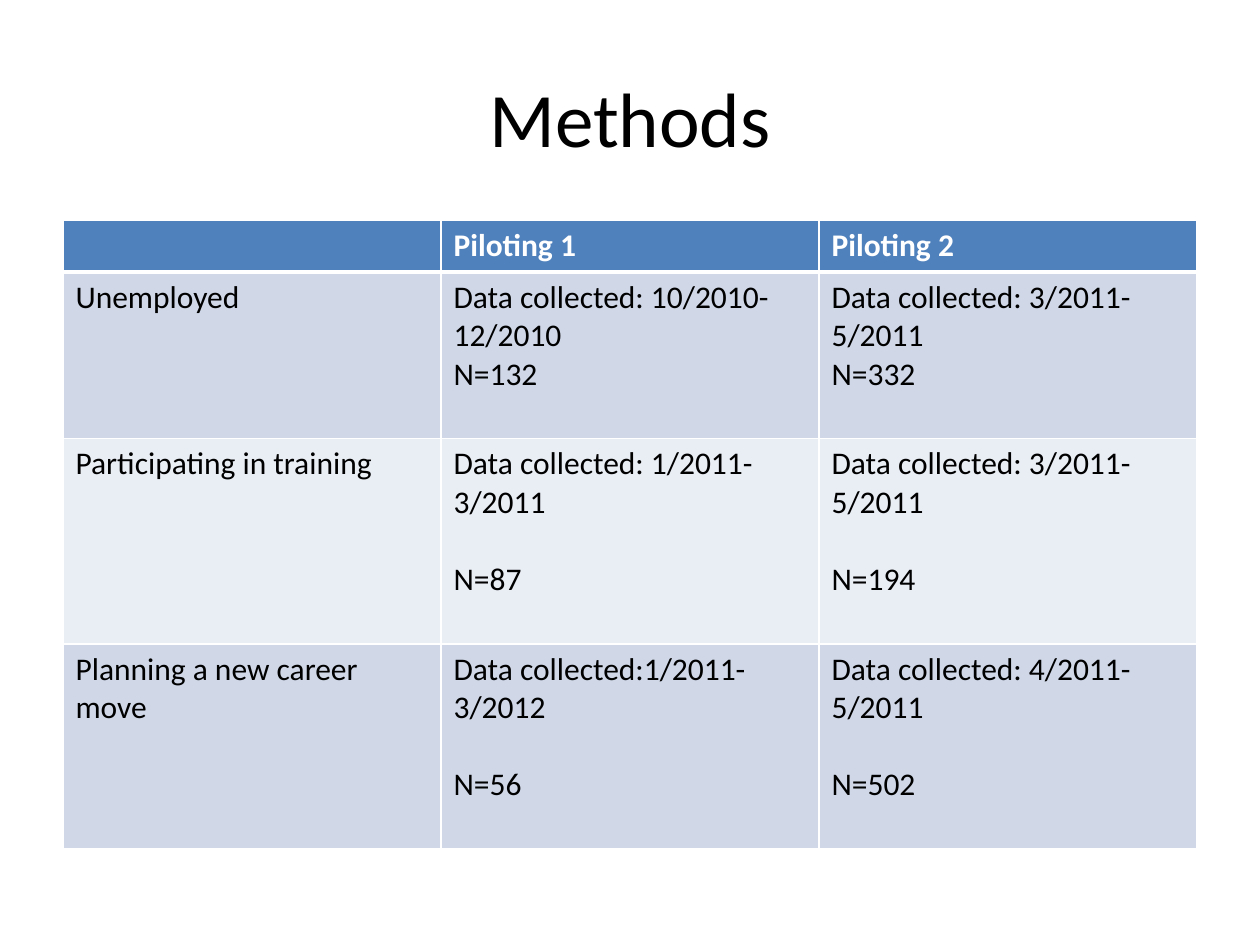
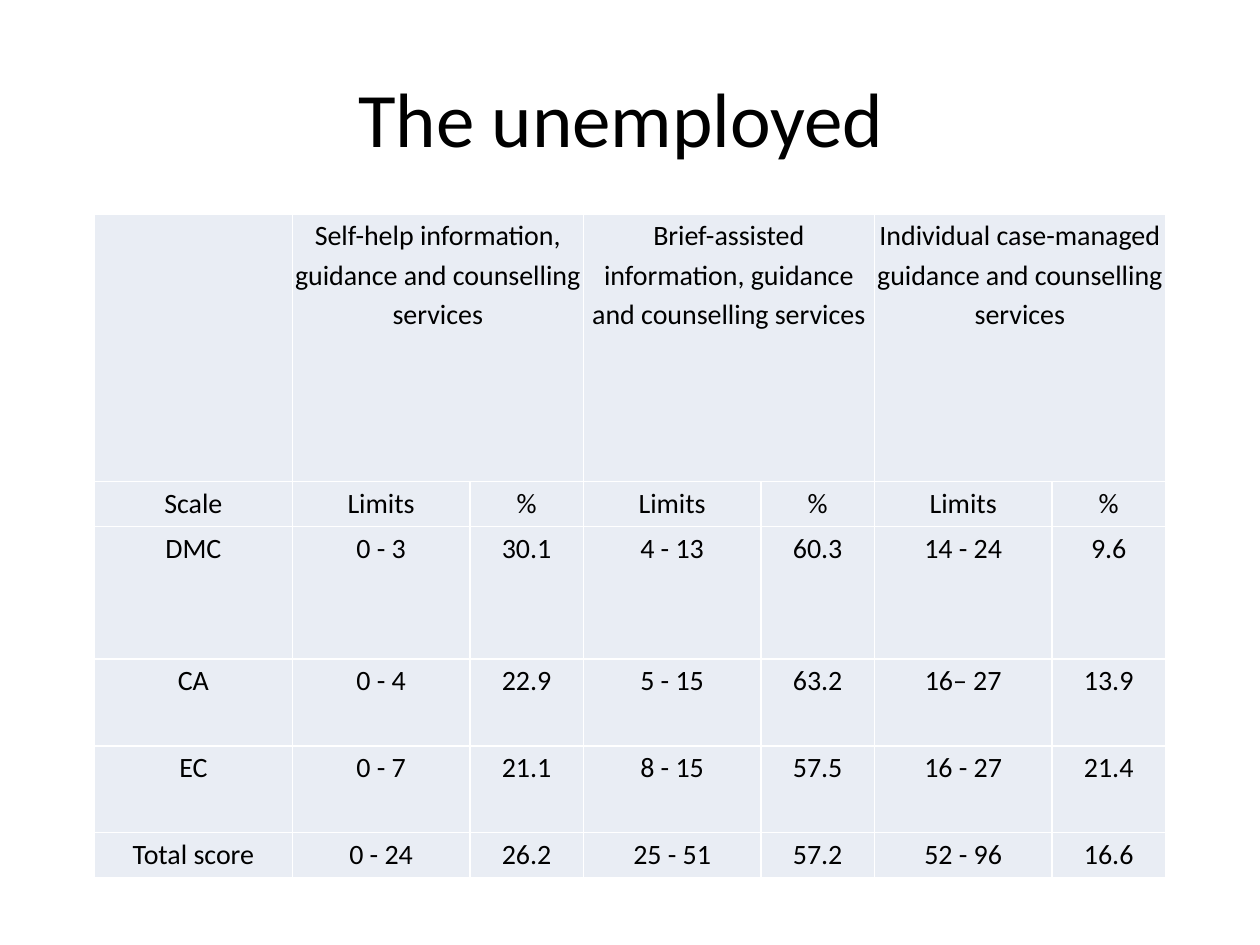
"""Build two slides of tables about the piloting data and the unemployed."""
import pptx
import pptx.dml.color
import pptx.enum.text
import pptx.oxml
import pptx.oxml.ns
import pptx.util
from pptx.util import Inches

FONT = "Calibri"
BLACK, WHITE = "000000", "FFFFFF"
HEADER_BLUE, BAND_BLUE, PALE_BLUE = "4F81BD", "D0D8E8", "E9EDF4"
CENTER = pptx.enum.text.PP_ALIGN.CENTER
LEFT = pptx.enum.text.PP_ALIGN.LEFT

METHODS = [
    ["", "Piloting 1", "Piloting 2"],
    ["Unemployed", "Data collected: 10/2010-12/2010\nN=132", "Data collected: 3/2011-5/2011\nN=332"],
    ["Participating in training", "Data collected: 1/2011-3/2011\nN=87", "Data collected: 3/2011-5/2011\nN=194"],
    ["Planning a new career move", "Data collected:1/2011-3/2012\nN=56", "Data collected: 4/2011-5/2011\nN=502"],
]
METHODS_HEIGHTS = [0.41, 1.32, 1.63, 1.63]
SAMPLE_GAPS = [0, 0, 22, 22]

SERVICES = [
    "Self-help information, guidance and counselling services",
    "Brief-assisted information, guidance and counselling services",
    "Individual case-managed guidance and counselling services",
]
SCORES = [
    ["DMC", "0 - 3", "30.1", "4 - 13", "60.3", "14 - 24", "9.6"],
    ["CA", "0 - 4", "22.9", "5 - 15", "63.2", "16– 27", "13.9"],
    ["EC", "0 - 7", "21.1", "8 - 15", "57.5", "16 - 27", "21.4"],
    ["Total score", "0 - 24", "26.2", "25 - 51", "57.2", "52 - 96", "16.6"],
]
SCORES_WIDTHS = [1.57] + [1.41, 0.9] * len(SERVICES)
SCORES_HEIGHTS = [2.12, 0.36, 1.05, 0.69, 0.69, 0.36]


def rgb(color):
    return pptx.dml.color.RGBColor.from_string(color)


def format_font(font, size, color=BLACK, bold=False):
    font.name, font.size, font.bold = FONT, pptx.util.Pt(size), bold
    font.color.rgb = rgb(color)


def add_titled_slide(presentation, title):
    slide = presentation.slides.add_slide(presentation.slide_layouts[5])
    shape = slide.shapes.title
    shape.left, shape.top = Inches(0.5), Inches(0.3)
    shape.width, shape.height = Inches(9), Inches(1.25)
    shape.text_frame.text = title
    shape.text_frame.vertical_anchor = pptx.enum.text.MSO_ANCHOR.MIDDLE
    paragraph = shape.text_frame.paragraphs[0]
    paragraph.alignment = CENTER
    format_font(paragraph.font, 44)
    return slide


def add_grid(slide, left, top, widths, heights, header):
    frame = slide.shapes.add_table(
        len(heights), len(widths), Inches(left), Inches(top),
        Inches(sum(widths)), Inches(sum(heights)))
    table = frame.table
    table.first_row = table.horz_banding = header
    for column, width in zip(table.columns, widths):
        column.width = Inches(width)
    for row, height in zip(table.rows, heights):
        row.height = Inches(height)
    return table


def set_borders(cell, widths):
    properties = cell._tc.get_or_add_tcPr()
    for side, width in zip("LRTB", widths):
        properties.append(pptx.oxml.parse_xml(
            f'<a:ln{side} {pptx.oxml.ns.nsdecls("a")} w="{pptx.util.Pt(width)}">'
            f'<a:solidFill><a:srgbClr val="{WHITE}"/></a:solidFill></a:ln{side}>'))


def fill_cell(cell, text, fill, size, color=BLACK, bold=False, alignment=LEFT, borders=(1, 1, 1, 1)):
    set_borders(cell, borders)
    cell.fill.solid()
    cell.fill.fore_color.rgb = rgb(fill)
    cell.text = text
    for paragraph in cell.text_frame.paragraphs:
        paragraph.alignment = alignment
        format_font(paragraph.font, size, color, bold)


def build_methods(presentation):
    slide = add_titled_slide(presentation, "Methods")
    table = add_grid(slide, 0.5, 1.75, [3] * 3, METHODS_HEIGHTS, header=True)
    for row, texts in enumerate(METHODS):
        for column, text in enumerate(texts):
            cell = table.cell(row, column)
            if row == 0:
                fill_cell(cell, text, HEADER_BLUE, 18, WHITE, True, borders=(1, 1, 1, 3))
            else:
                fill_cell(cell, text, BAND_BLUE if row % 2 else PALE_BLUE, 18,
                          borders=(1, 1, 3 if row == 1 else 1, 1))
            for paragraph in cell.text_frame.paragraphs[1:]:
                paragraph.space_before = pptx.util.Pt(SAMPLE_GAPS[row])


def build_unemployed(presentation):
    slide = add_titled_slide(presentation, "The unemployed ")
    table = add_grid(slide, 0.75, 1.7, SCORES_WIDTHS, SCORES_HEIGHTS, header=False)
    service_row = [""] + [text for service in SERVICES for text in (service, "")]
    limit_row = ["Scale"] + ["Limits", "%"] * len(SERVICES)
    for row, texts in enumerate([service_row, limit_row] + SCORES):
        for column, text in enumerate(texts):
            cell = table.cell(row, column)
            fill_cell(cell, text, PALE_BLUE, 16, alignment=CENTER)
            cell.margin_left = cell.margin_right = Inches(0.02)
            cell.margin_top = cell.margin_bottom = 0
            paragraph = cell.text_frame.paragraphs[0]
            paragraph.line_spacing = 1.15
            paragraph.space_after = pptx.util.Pt(10)
    for column in range(1, len(SCORES_WIDTHS), 2):
        table.cell(0, column).merge(table.cell(0, column + 1))


def main():
    presentation = pptx.Presentation()
    presentation.slide_width, presentation.slide_height = Inches(10), Inches(7.5)
    build_methods(presentation)
    build_unemployed(presentation)
    presentation.save("out.pptx")


if __name__ == "__main__":
    main()
